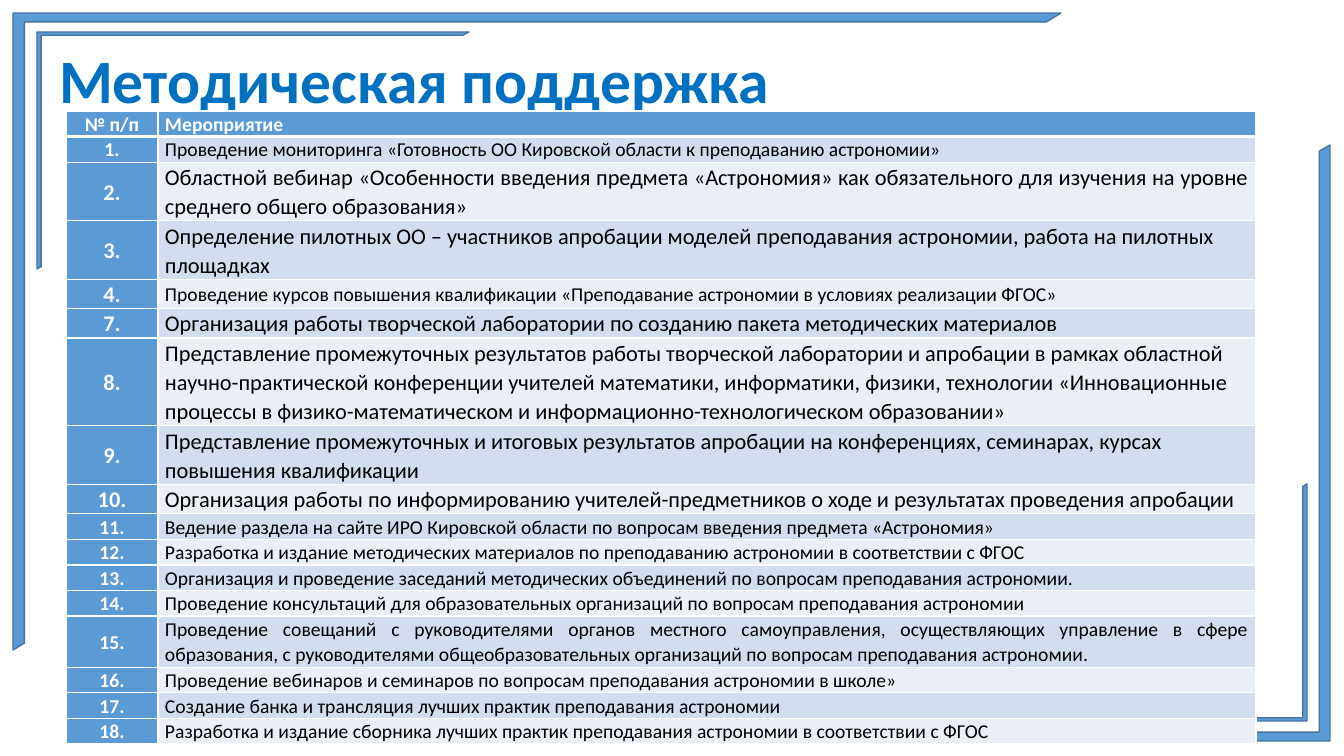
from dataclasses import dataclass

from lxml import etree
from pptx import Presentation
from pptx import util as u
from pptx.dml.color import RGBColor
from pptx.enum import shapes, text

EMU = 12192000 / 1344
NS = "http://schemas.openxmlformats.org/drawingml/2006/main"


@dataclass(frozen=True)
class Theme:
    font: str = "Calibri"
    blue: str = "5B9BD5"
    edge: str = "43739E"
    head: str = "0070C0"
    dark: str = "D2DEEF"
    pale: str = "EAEFF7"
    white: str = "FFFFFF"
    black: str = "000000"
    title: int = 44
    big: int = 16
    small: int = 14


T = Theme()

# left, top, width, height, rotation, top and side thickness
FRAMES = [
    (13, 13, 1048, 637, 0, 0.014, 0.018),
    (286, 145, 1044, 596, 180, 0.015, 0.018),
    (37, 32, 432, 237, 0, 0.014, 0.018),
    (875, 484, 432, 237, 180, 0.014, 0.018),
]

# number, lines of text, event
EVENTS = [
    (1, 1, "Проведение мониторинга «Готовность ОО Кировской области к преподаванию астрономии»"),
    (2, 2, "Областной вебинар «Особенности введения предмета «Астрономия» как обязательного "
           "для изучения на уровне среднего общего образования»"),
    (3, 2, "Определение пилотных ОО – участников апробации моделей преподавания астрономии, "
           "работа на пилотных площадках"),
    (4, 1, "Проведение курсов повышения квалификации «Преподавание астрономии "
           "в условиях реализации ФГОС»"),
    (7, 1, "Организация работы творческой лаборатории по созданию пакета методических материалов"),
    (8, 3, "Представление промежуточных результатов работы творческой лаборатории и апробации "
           "в рамках областной научно-практической конференции учителей математики, информатики, "
           "физики, технологии «Инновационные процессы в физико-математическом "
           "и информационно-технологическом образовании»"),
    (9, 2, "Представление промежуточных и итоговых результатов апробации на конференциях, "
           "семинарах, курсах повышения квалификации"),
    (10, 1, "Организация работы по информированию учителей-предметников "
            "о ходе и результатах проведения апробации"),
    (11, 1, "Ведение раздела на сайте ИРО Кировской области по вопросам введения "
            "предмета «Астрономия»"),
    (12, 1, "Разработка и издание методических материалов по преподаванию астрономии "
            "в соответствии с ФГОС"),
    (13, 1, "Организация и проведение заседаний методических объединений "
            "по вопросам преподавания астрономии."),
    (14, 1, "Проведение консультаций для образовательных организаций "
            "по вопросам преподавания астрономии"),
    (15, 2, "Проведение совещаний с руководителями органов местного самоуправления, "
            "осуществляющих управление в сфере образования, с руководителями "
            "общеобразовательных организаций по вопросам преподавания астрономии."),
    (16, 1, "Проведение вебинаров и семинаров по вопросам преподавания астрономии в школе»"),
    (17, 1, "Создание банка и трансляция лучших практик преподавания астрономии"),
    (18, 1, "Разработка и издание сборника лучших практик преподавания астрономии "
            "в соответствии с ФГОС"),
]


def px(n):
    return u.Emu(round(n * EMU))


def rgb(code):
    return RGBColor.from_string(code)


def style(para, size, color, bold, align, space):
    para.alignment = align
    para.line_spacing = space
    for run in para.runs:
        font = run.font
        font.name, font.size, font.bold = T.font, u.Pt(size), bold
        font.color.rgb = rgb(color)


def add_frame(slide, left, top, width, height, turn, *thick):
    frame = slide.shapes.add_shape(
        shapes.MSO_SHAPE.HALF_FRAME, px(left), px(top), px(width), px(height))
    frame.rotation = turn
    for i, part in enumerate(thick):
        frame.adjustments[i] = part
    frame.shadow.inherit = False
    frame.fill.solid()
    frame.fill.fore_color.rgb = rgb(T.blue)
    frame.line.color.rgb = rgb(T.edge)
    frame.line.width = u.Pt(1)


def set_title(slide, words):
    title = slide.shapes.title
    title.left, title.top, title.width, title.height = map(px, (49, 11, 1159, 146))
    title.text_frame.text = words
    title.text_frame.vertical_anchor = text.MSO_ANCHOR.MIDDLE
    style(title.text_frame.paragraphs[0], T.title, T.head, True, text.PP_ALIGN.LEFT, 0.9)
    # Bring the title in front of the frames
    title.element.getparent().append(title.element)


def add_edges(cell, base):
    props = cell._tc.get_or_add_tcPr()
    for side, points in zip("LRTB", (1, 1, 1, base)):
        line = etree.SubElement(props, f"{{{NS}}}ln{side}", w=str(u.Pt(points)))
        fill = etree.SubElement(line, f"{{{NS}}}solidFill")
        etree.SubElement(fill, f"{{{NS}}}srgbClr", val=T.white)


def set_cell(cell, words, size, align, fill, bold=True, base=1, top=False):
    add_edges(cell, base)
    cell.fill.solid()
    cell.fill.fore_color.rgb = rgb(fill)
    cell.margin_left = cell.margin_right = px(7)
    cell.margin_top = cell.margin_bottom = 0
    cell.vertical_anchor = text.MSO_ANCHOR.TOP if top else text.MSO_ANCHOR.MIDDLE
    cell.text_frame.text = words
    color = T.white if bold else T.black
    style(cell.text_frame.paragraphs[0], size, color, bold, align, 1.07)


def add_events(slide):
    mid, left, full = text.PP_ALIGN.CENTER, text.PP_ALIGN.LEFT, text.PP_ALIGN.JUSTIFY
    grid = slide.shapes.add_table(
        len(EVENTS) + 1, 2, px(66), px(111), px(1190), px(622)).table
    grid.columns[0].width, grid.columns[1].width = px(92), px(1098)

    grid.rows[0].height = px(25)
    for i, (words, align) in enumerate([("№ п/п", mid), ("Мероприятие", left)]):
        set_cell(grid.cell(0, i), words, T.small, align, T.blue, base=3)

    for i, (num, lines, words) in enumerate(EVENTS, 1):
        size = T.big if 2 <= num <= 10 else T.small
        grid.rows[i].height = px(lines * (29 if size == T.big else 25))
        set_cell(grid.cell(i, 0), f"{num}.", size, mid, T.blue)
        set_cell(grid.cell(i, 1), words,
                 T.small if num == 4 else size,
                 left if 3 <= num <= 10 else full,
                 T.dark if i % 2 else T.pale,
                 bold=False, top=num in (1, 2, 14))


def main():
    deck = Presentation()
    deck.slide_width, deck.slide_height = px(1344), px(756)
    slide = deck.slides.add_slide(deck.slide_layouts[5])
    for frame in FRAMES:
        add_frame(slide, *frame)
    set_title(slide, "Методическая поддержка")
    add_events(slide)
    deck.save("out.pptx")


if __name__ == "__main__":
    main()
